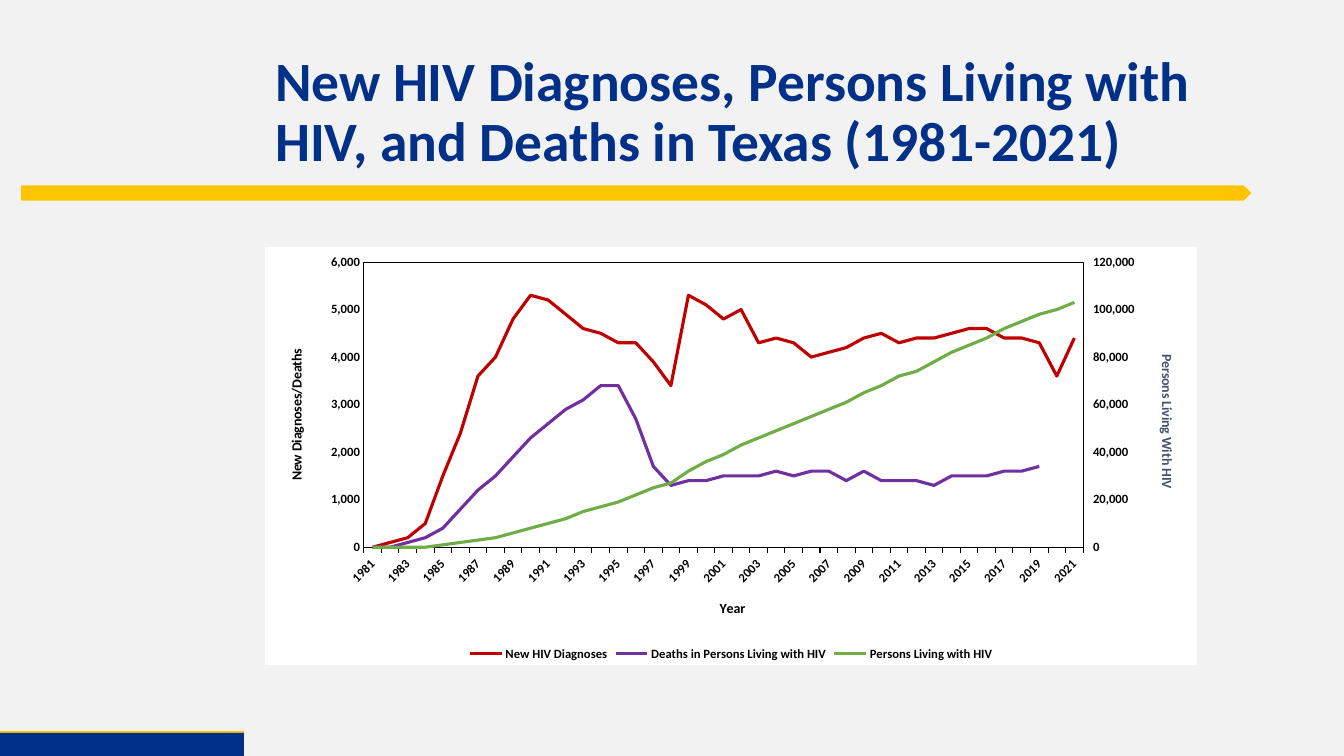
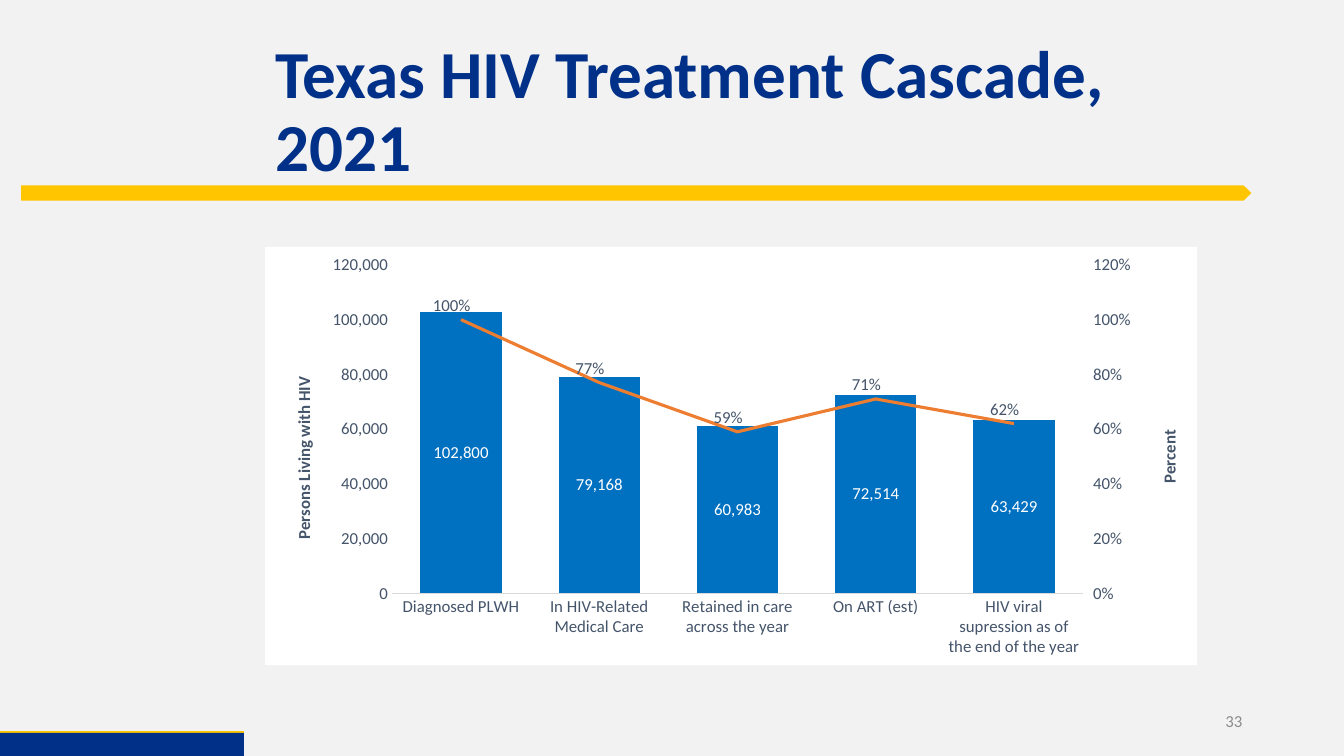
from copy import deepcopy
from dataclasses import dataclass
from typing import NamedTuple, Optional

from pptx import Presentation, oxml, util as u
from pptx.chart import axis as chart_axis
from pptx.chart.chart import Chart
from pptx.chart.data import CategoryChartData
from pptx.dml.color import RGBColor
from pptx.enum import chart as ch, shapes, text
from pptx.oxml import ns
from pptx.slide import Slide
from pptx.text.text import Font

WIDTH, HEIGHT = u.Inches(13.33), u.Inches(7.5)
FONT = "Calibri"
COLOURS = {
    "paper": "F2F2F2", "white": "FFFFFF", "black": "000000", "navy": "003087",
    "gold": "FFC600", "grey": "8C8C8C", "rule": "D9D9D9", "slate": "44546A",
    "red": "C00000", "purple": "7030A0", "green": "70AD47",
    "blue": "0070C0", "orange": "ED7D31",
}


class Area(NamedTuple):
    """Left, top, width and height in percent of the slide."""
    left: float
    top: float
    width: float
    height: float

    def emu(self) -> tuple[int, ...]:
        sides = (WIDTH, HEIGHT, WIDTH, HEIGHT)
        return tuple(round(side * share / 100) for side, share in zip(sides, self))


TITLE = Area(19.73, 5.33, 73.44, 19.33)
ARROW_BAND = Area(1.58, 24.53, 91.52, 2)
FOOTER = Area(0, 96.93, 18.15, 3.07)
PAGE_NUMBER = Area(70.67, 92.67, 22.51, 5.33)
CHART = Area(19.73, 32.67, 69.32, 55.33)


@dataclass(frozen=True)
class AxisTitle:
    words: str
    left: float  # percent of the chart
    top: float
    turn: int = 0  # degrees
    colour: str = "slate"


@dataclass(frozen=True)
class Scale:
    top: float
    step: float
    pattern: str
    title: AxisTitle


@dataclass(frozen=True)
class Series:
    name: str
    colour: str
    values: list[Optional[float]]


@dataclass(frozen=True)
class ChartPlan:
    kind: ch.XL_CHART_TYPE
    categories: list[str]
    series: list[Series]  # the last one uses the right axis
    left: Scale
    right: Scale
    plot: tuple[float, float, float, float]  # percent of the chart
    size: float
    title_size: float
    colour: str
    bold: bool
    rule: str


def colour(name: str) -> RGBColor:
    return RGBColor.from_string(COLOURS[name])


def style_font(font: Font, size: float, tint: str, bold: bool = False) -> None:
    font.name, font.size, font.bold = FONT, u.Pt(size), bold
    font.color.rgb = colour(tint)


def add_text(page: Slide, area: Area, words: str, size: float, tint: str,
             bold: bool = False, align=text.PP_ALIGN.LEFT, spacing: float = 1) -> None:
    frame = page.shapes.add_textbox(*area.emu()).text_frame
    frame.word_wrap = True
    frame.vertical_anchor = text.MSO_ANCHOR.MIDDLE
    para = frame.paragraphs[0]
    para.alignment, para.line_spacing = align, spacing
    span = para.add_run()
    span.text = words
    style_font(span.font, size, tint, bold)


def add_band(page: Slide, kind: shapes.MSO_SHAPE, area: Area, tint: str) -> None:
    band = page.shapes.add_shape(kind, *area.emu())
    band.shadow.inherit = False
    band.fill.solid()
    band.fill.fore_color.rgb = colour(tint)
    band.line.fill.background()


def add_page(deck, title: str, title_size: float) -> Slide:
    """Blank page with the shared background, bands and title."""
    page = deck.slides.add_slide(deck.slide_layouts[6])
    page.background.fill.solid()
    page.background.fill.fore_color.rgb = colour("paper")
    add_band(page, shapes.MSO_SHAPE.PENTAGON, ARROW_BAND, "gold")
    left, top, width, _ = FOOTER.emu()
    rule = page.shapes.add_connector(shapes.MSO_CONNECTOR.STRAIGHT, left, top, left + width, top)
    rule.line.color.rgb, rule.line.width = colour("gold"), u.Pt(3)
    rule.element.spPr.append(oxml.parse_xml(f"<a:effectLst {ns.nsdecls('a')}/>"))
    add_band(page, shapes.MSO_SHAPE.RECTANGLE, FOOTER, "navy")
    add_text(page, TITLE, title, title_size, "navy", True, spacing=0.9)
    return page


# Chart XML helpers

def chart_xml(tag: str, inner: str = "", attributes: str = ""):
    return oxml.parse_xml(f"<c:{tag} {ns.nsdecls('c', 'a')} {attributes}>{inner}</c:{tag}>")


def layout_xml(left: float, top: float, size: Optional[tuple[float, float]] = None,
               mode: str = "edge"):
    """Manual placement inside the chart, in percent of its size."""
    places = {"x": left, "y": top}
    inner = ""
    if mode == "edge":
        inner = '<c:xMode val="edge"/><c:yMode val="edge"/>'
    if size:
        inner = '<c:layoutTarget val="inner"/>' + inner
        places.update(w=size[0], h=size[1])
    inner += "".join(f'<c:{key} val="{value / 100}"/>' for key, value in places.items())
    return chart_xml("layout", f"<c:manualLayout>{inner}</c:manualLayout>")


def place(parent, before, layout) -> None:
    for old in parent.xpath("./c:layout"):
        parent.remove(old)
    before.addprevious(layout)


def split_last_series(chart: Chart) -> tuple[chart_axis.ValueAxis, chart_axis.ValueAxis]:
    """Move the last series to a line plot on the right; give both value axes."""
    first = chart.element.xpath("//c:plotArea/*[c:ser]")[0]
    series = first.xpath("./c:ser")[-1]
    for flag in series.xpath("./c:invertIfNegative"):
        series.remove(flag)
    lines = chart_xml("lineChart", '<c:grouping val="standard"/><c:varyColors val="0"/>'
                      '<c:marker val="1"/><c:axId val="50"/><c:axId val="60"/>')
    lines.insert(2, series)
    first.addnext(lines)
    old_cat, old_val = (chart.element.xpath(f"//c:{tag}")[0] for tag in ("catAx", "valAx"))
    new_cat, new_val = deepcopy(old_cat), deepcopy(old_val)
    changes = ((new_cat, {"axId": "50", "crossAx": "60", "delete": "1"}),
               (new_val, {"axId": "60", "crossAx": "50", "axPos": "r", "crosses": "max"}))
    for element, values in changes:
        for tag, value in values.items():
            element.xpath(f"./c:{tag}")[0].set("val", value)
    old_val.addnext(new_val)
    new_val.addnext(new_cat)
    return chart_axis.ValueAxis(old_val), chart_axis.ValueAxis(new_val)


# Chart styling

def add_axis_title(axis, title: AxisTitle, size: float) -> None:
    heading = axis.axis_title
    span = heading.text_frame.paragraphs[0].add_run()
    span.text = title.words
    style_font(span.font, size, title.colour, True)
    element = heading.element
    body = element.xpath(".//a:bodyPr")[0]
    body.set("rot", str(title.turn * 60000))
    body.set("vert", "horz")
    place(element, element.xpath("./c:overlay")[0], layout_xml(title.left, title.top))


def style_scale(axis: chart_axis.ValueAxis, scale: Scale, plan: ChartPlan, tick) -> None:
    axis.has_major_gridlines = False
    axis.minimum_scale, axis.maximum_scale, axis.major_unit = 0, scale.top, scale.step
    axis.major_tick_mark = tick
    axis.format.line.fill.background()
    axis.tick_labels.number_format = scale.pattern
    axis.tick_labels.number_format_is_linked = False
    style_font(axis.tick_labels.font, plan.size, plan.colour, plan.bold)
    add_axis_title(axis, scale.title, plan.title_size)


def style_labels(labels, pattern: str, position, tint: str) -> None:
    labels.show_value = True
    labels.number_format, labels.number_format_is_linked = pattern, False
    style_font(labels.font, 12, tint)
    labels.position = position


def add_combined_chart(page: Slide, plan: ChartPlan) -> Chart:
    data = CategoryChartData(number_format="General")
    data.categories = plan.categories
    for item in plan.series:
        data.add_series(item.name, item.values)
    chart = page.shapes.add_chart(plan.kind, *CHART.emu(), data).chart
    chart.has_title = chart.has_legend = False
    style_font(chart.font, plan.size, plan.colour)
    left, right = split_last_series(chart)
    style_scale(left, plan.left, plan, ch.XL_TICK_MARK.NONE)
    style_scale(right, plan.right, plan, ch.XL_TICK_MARK.OUTSIDE)

    bottom = chart.category_axis
    bottom.has_major_gridlines = False
    bottom.major_tick_mark = ch.XL_TICK_MARK.NONE
    bottom.format.line.color.rgb, bottom.format.line.width = colour(plan.rule), u.Pt(0.75)
    style_font(bottom.tick_labels.font, plan.size, plan.colour, plan.bold)

    all_series = [series for plot in chart.plots for series in plot.series]
    for plot in chart.plots:
        plot.vary_by_categories = False
    for series, item in zip(all_series, plan.series):
        if hasattr(series, "smooth"):
            series.smooth = False
            series.marker.style = ch.XL_MARKER_STYLE.NONE
            series.format.line.color.rgb = colour(item.colour)
            series.format.line.width = u.Pt(2.25)
        else:
            series.format.fill.solid()
            series.format.fill.fore_color.rgb = colour(item.colour)

    area = chart.element.xpath("//c:plotArea")[0]
    x, y, width, height = plan.plot
    place(area, area.xpath("./*[c:ser]")[0], layout_xml(x, y, (width, height)))
    white = f'<a:solidFill><a:srgbClr val="{COLOURS["white"]}"/></a:solidFill>'
    chart.element.xpath("./c:chart")[0].addnext(
        chart_xml("spPr", white + "<a:ln><a:noFill/></a:ln>"))
    return chart


def draw_history(deck) -> None:
    page = add_page(
        deck, "New HIV Diagnoses, Persons Living with HIV, and Deaths in Texas (1981-2021)", 39.6)
    # Counts in hundreds for the left axis, in thousands for the right one
    diagnoses = [0, 1, 2, 5, 15, 24, 36, 40, 48, 53, 52, 49, 46, 45, 43, 43, 39, 34, 53, 51, 48,
                 50, 43, 44, 43, 40, 41, 42, 44, 45, 43, 44, 44, 45, 46, 46, 44, 44, 43, 36, 44]
    deaths = [0, 0, 1, 2, 4, 8, 12, 15, 19, 23, 26, 29, 31, 34, 34, 27, 17, 13, 14, 14, 15,
              15, 15, 16, 15, 16, 16, 14, 16, 14, 14, 14, 13, 15, 15, 15, 16, 16, 17]
    living = [0, 0, 0, 0, 1, 2, 3, 4, 6, 8, 10, 12, 15, 17, 19, 22, 25, 27, 32, 36, 39, 43, 46,
              49, 52, 55, 58, 61, 65, 68, 72, 74, 78, 82, 85, 88, 92, 95, 98, 100, 103]
    chart = add_combined_chart(page, ChartPlan(
        ch.XL_CHART_TYPE.LINE, [str(year) for year in range(1981, 2022)],
        [Series("New HIV Diagnoses", "red", [n * 100 for n in diagnoses]),
         Series("Deaths in Persons Living with HIV", "purple",
                [n * 100 for n in deaths] + [None, None]),
         Series("Persons Living with HIV", "green", [n * 1000 for n in living])],
        Scale(6000, 1000, "#,##0", AxisTitle("New Diagnoses/Deaths", 2.1, 23.7, -90, "black")),
        Scale(120000, 20000, "#,##0", AxisTitle("Persons Living With HIV", 95.5, 25, 90)),
        (10.6, 3.6, 77.2, 68.2), 9, 10, "black", True, "black"))
    years = chart.category_axis
    years.major_tick_mark = ch.XL_TICK_MARK.OUTSIDE
    add_axis_title(years, AxisTitle("Year", 48.5, 83.5, colour="black"), 10)
    axis = chart.element.xpath("//c:catAx")[0]
    axis.xpath("./c:txPr/a:bodyPr")[0].set("rot", str(-45 * 60000))
    for tag, gap in (("tickLblSkip", 2), ("tickMarkSkip", 1)):
        axis.xpath("./c:noMultiLvlLbl")[0].addprevious(chart_xml(tag, attributes=f'val="{gap}"'))
    # Frame round the plot
    chart.element.xpath("//c:plotArea")[0].append(chart_xml(
        "spPr", '<a:noFill/><a:ln w="9525"><a:solidFill>'
        f'<a:srgbClr val="{COLOURS["black"]}"/></a:solidFill></a:ln>'))
    chart.has_legend = True
    chart.legend.position = ch.XL_LEGEND_POSITION.BOTTOM
    chart.legend.include_in_layout = False
    style_font(chart.legend.font, 9, "black", True)


def draw_cascade(deck) -> None:
    page = add_page(deck, "Texas HIV Treatment Cascade, 2021", 48)
    add_text(page, PAGE_NUMBER, "33", 12, "grey", align=text.PP_ALIGN.RIGHT)
    chart = add_combined_chart(page, ChartPlan(
        ch.XL_CHART_TYPE.COLUMN_CLUSTERED,
        ["Diagnosed PLWH", "In HIV-Related Medical Care", "Retained in care across the year",
         "On ART (est)", "HIV viral supression as of the end of the year"],
        [Series("Series 1", "blue", [102800, 79168, 60983, 72514, 63429]),
         Series("Series 2", "orange", [1, 0.77, 0.59, 0.71, 0.62])],
        Scale(120000, 20000, "#,##0", AxisTitle("Persons Living with HIV", 2.6, 30.3, -90)),
        Scale(1.2, 0.2, "0%", AxisTitle("Percent", 95.5, 43, -90)),
        (13.6, 4.3, 74.2, 78.5), 12, 12, "slate", False, "rule"))
    columns, line = chart.plots
    columns.gap_width, columns.overlap = 70, -27
    style_labels(columns.series[0].data_labels, "#,##0", ch.XL_LABEL_POSITION.CENTER, "white")
    style_labels(line.series[0].data_labels, "0%", ch.XL_LABEL_POSITION.ABOVE, "slate")
    # Shift each percentage a little to the left of its point
    labels = chart.element.xpath("//c:lineChart/c:ser/c:dLbls")[0]
    shared = labels.xpath("./*[not(self::c:showLeaderLines)]")
    for index in range(5):
        label = chart_xml("dLbl", f'<c:idx val="{index}"/>')
        label.append(layout_xml(-1, 0, mode="factor"))
        label.extend([deepcopy(part) for part in shared])
        labels.insert(index, label)


def main() -> None:
    deck = Presentation()
    deck.slide_width, deck.slide_height = WIDTH, HEIGHT
    draw_history(deck)
    draw_cascade(deck)
    deck.save("out.pptx")


if __name__ == "__main__":
    main()
